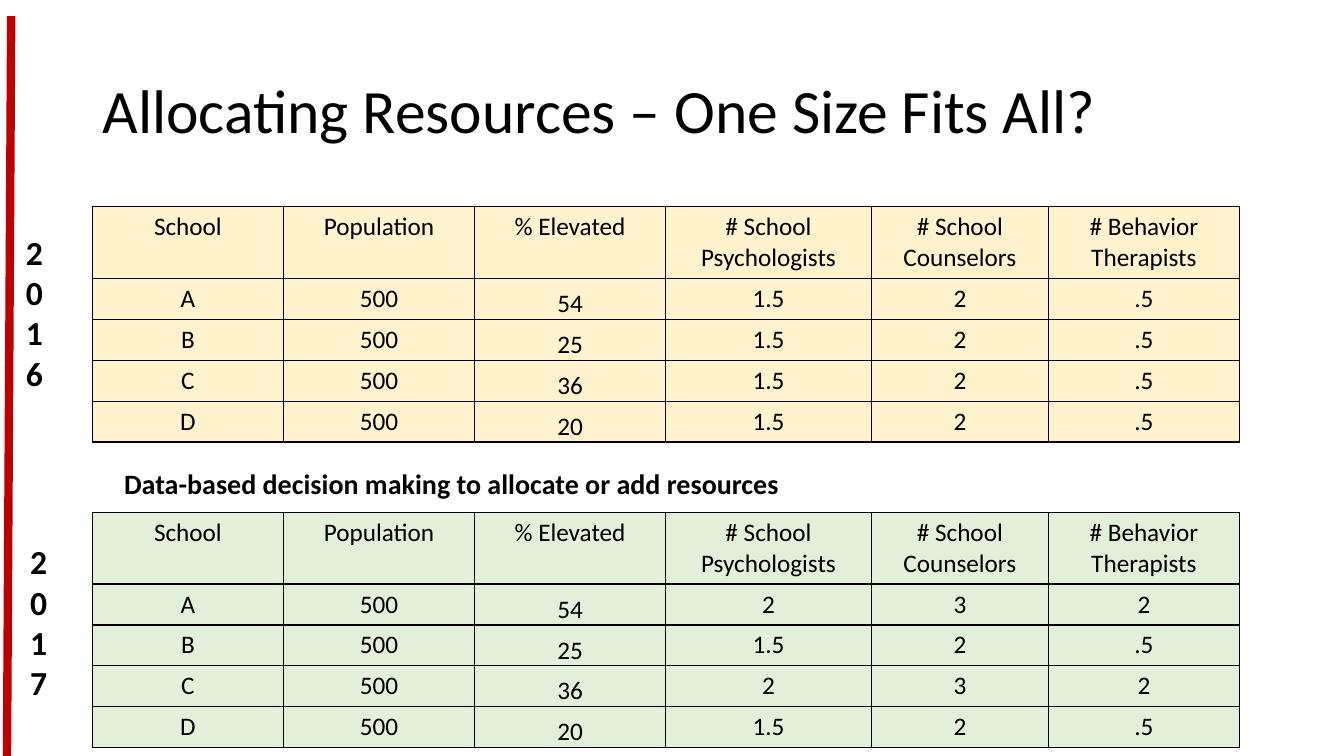
from dataclasses import dataclass

from lxml import etree
from pptx import Presentation
from pptx.dml.color import RGBColor
from pptx.enum import shapes, text
from pptx.oxml import parse_xml
from pptx.oxml.ns import nsdecls, qn
from pptx.util import Pt


@dataclass(frozen=True)
class Theme:
    font: str = "Calibri"
    ink: str = "000000"
    accent: str = "C00000"
    year_2016: str = "FFF2CC"
    year_2017: str = "E2F0D9"
    title: int = 44
    year: int = 24
    caption: int = 20
    cell: int = 18


THEME = Theme()
LEFT_ALIGNED, CENTRED = text.PP_ALIGN.LEFT, text.PP_ALIGN.CENTER

COLUMN_WIDTHS = (136.5, 136.5, 136.5, 147, 126.4, 136.5)
HEADER_HEIGHT, ROW_HEIGHT = 51, 29
HEADERS = ("School", "Population", "% Elevated", "# School Psychologists",
           "# School Counselors", "# Behavior Therapists")
ELEVATED = 2
SCHOOLS = (("A", "500", "54"), ("B", "500", "25"),
           ("C", "500", "36"), ("D", "500", "20"))
BASE_STAFF = ("1.5", "2", ".5")
ADDED_STAFF = ("2", "3", "2")


def apply(target, values):
    for name, value in values.items():
        setattr(target, name, value)


def format_paragraph(p, size, bold=False, align=LEFT_ALIGNED):
    p.alignment = align
    apply(p.font, {"name": THEME.font, "size": Pt(size), "bold": bold})
    p.font.color.rgb = RGBColor.from_string(THEME.ink)


def set_title(s, words):
    title = s.shapes.title
    apply(title, {"left": Pt(66), "top": Pt(28.75),
                  "width": Pt(828), "height": Pt(104.4)})
    tf = title.text_frame
    tf.text = words
    apply(tf, {"vertical_anchor": text.MSO_ANCHOR.MIDDLE,
               "auto_size": text.MSO_AUTO_SIZE.NONE})
    p = tf.paragraphs[0]
    format_paragraph(p, THEME.title)
    p.line_spacing = 0.9


def add_label(s, words, box, size, wrap):
    sp = s.shapes.add_textbox(*map(Pt, box))
    tf = sp.text_frame
    apply(tf, {"word_wrap": wrap,
               "auto_size": text.MSO_AUTO_SIZE.SHAPE_TO_FIT_TEXT})
    tf.text = words
    for p in tf.paragraphs:
        format_paragraph(p, size, bold=True)


def add_year(s, year, left, top):
    """Stack the digits of a year, with a line break between the middle two."""
    a, b, c, d = year
    add_label(s, f"{a}\n{b}\v{c}\n{d}", (left, top, 26.6, 124), THEME.year, False)


def add_borders(cell):
    tc_pr = cell._tc.get_or_add_tcPr()
    for i, side in enumerate("LRTB"):
        tc_pr.insert(i, parse_xml(
            f'<a:ln{side} {nsdecls("a")} w="{Pt(1)}"><a:solidFill>'
            f'<a:srgbClr val="{THEME.ink}"/></a:solidFill></a:ln{side}>'))


def add_staff_table(s, top, fill, staff):
    rows = [HEADERS] + [school + posts for school, posts in zip(SCHOOLS, staff)]
    heights = [HEADER_HEIGHT] + [ROW_HEIGHT] * len(SCHOOLS)
    frame = s.shapes.add_table(len(rows), len(HEADERS), Pt(66), Pt(top),
                               Pt(sum(COLUMN_WIDTHS)), Pt(sum(heights)))
    table = frame.table
    apply(table, {"first_row": False, "horz_banding": False})
    for column, width in zip(table.columns, COLUMN_WIDTHS):
        column.width = Pt(width)
    for r, (values, height) in enumerate(zip(rows, heights)):
        table.rows[r].height = Pt(height)
        for c, value in enumerate(values):
            cell = table.cell(r, c)
            cell.text = value
            format_paragraph(cell.text_frame.paragraphs[0], THEME.cell, align=CENTRED)
            cell.fill.solid()
            cell.fill.fore_color.rgb = RGBColor.from_string(fill)
            if r and c == ELEVATED:
                apply(cell, {"vertical_anchor": text.MSO_ANCHOR.BOTTOM,
                             "margin_left": Pt(0.75), "margin_right": Pt(0.75),
                             "margin_top": Pt(0.75), "margin_bottom": 0})
            add_borders(cell)


def add_accent_line(s, start, end):
    line = s.shapes.add_connector(shapes.MSO_CONNECTOR.STRAIGHT,
                                  *map(Pt, start + end))
    line.line.color.rgb = RGBColor.from_string(THEME.accent)
    line.line.width = Pt(6)
    etree.SubElement(line._element.spPr, qn("a:effectLst"))


def main():
    prs = Presentation()
    apply(prs, {"slide_width": Pt(960), "slide_height": Pt(540)})
    s = prs.slides.add_slide(prs.slide_layouts[5])
    set_title(s, "Allocating Resources – One Size Fits All?")
    add_staff_table(s, 147.75, THEME.year_2016, [BASE_STAFF] * 4)
    add_staff_table(s, 366, THEME.year_2017, [ADDED_STAFF, BASE_STAFF] * 2)
    add_label(s, "Data-based decision making to allocate or add resources",
              (81.5, 330, 661, 53), THEME.caption, True)
    add_year(s, "2016", 11.5, 162)
    add_year(s, "2017", 14.4, 383)
    add_accent_line(s, (5, 540), (8, 11.5))
    prs.save("out.pptx")


if __name__ == "__main__":
    main()
